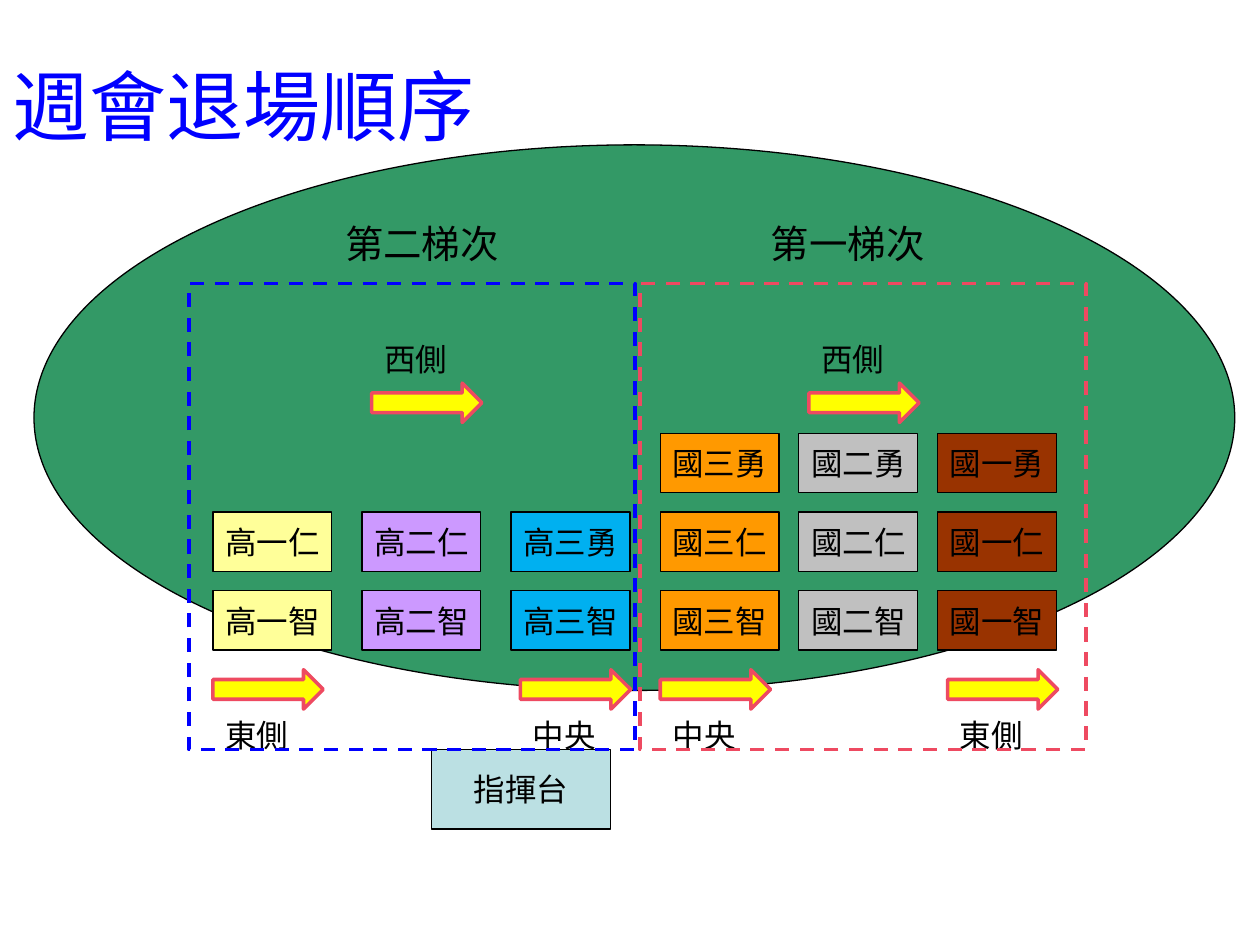
from dataclasses import dataclass

from pptx import Presentation
from pptx.dml.color import RGBColor
from pptx.enum.dml import MSO_LINE
from pptx.enum.shapes import MSO_SHAPE
from pptx.enum.text import MSO_ANCHOR, MSO_AUTO_SIZE, PP_ALIGN
from pptx.util import Inches, Pt

BLUE = RGBColor(0x00, 0x00, 0xFF)
BLACK = RGBColor(0x00, 0x00, 0x00)
FIELD_GREEN = RGBColor(0x33, 0x99, 0x66)
PODIUM_BLUE = RGBColor(0xBB, 0xE0, 0xE3)
SKY = RGBColor(0x00, 0xB0, 0xF0)
LILAC = RGBColor(0xCC, 0x99, 0xFF)
CREAM = RGBColor(0xFF, 0xFF, 0x99)
ORANGE = RGBColor(0xFF, 0x99, 0x00)
SILVER = RGBColor(0xC0, 0xC0, 0xC0)
BROWN = RGBColor(0x99, 0x33, 0x00)
YELLOW = RGBColor(0xFF, 0xFF, 0x00)
CORAL = RGBColor(0xEE, 0x4A, 0x61)

FONT = "Arial"
# The slide is a grid of 100 columns by 75 rows of square units.
SLIDE_WIDTH, SLIDE_HEIGHT = Inches(10), Inches(7.5)
UNIT = SLIDE_WIDTH // 100

CLASS_WIDTH, CLASS_HEIGHT = 9.44, 4.72
CLASS_TOP, CLASS_ROW_PITCH, CLASS_ROWS = 11.88, 6.25, 3
ARROW_WIDTH, ARROW_HEIGHT = 8.75, 3.13
LABEL_WIDTH, LABEL_HEIGHT = 7.9, 4
WEST_LABEL_TOP, WEST_ARROW_TOP = 4, 7.9
EXIT_ARROW_TOP, EXIT_LABEL_TOP = 30.65, 33.85
HEADING_WIDTH, HEADING_HEIGHT = 15, 4.7


@dataclass
class Box:
    """An area in grid units."""
    left: float
    top: float
    width: float
    height: float

    def inner(self, left, top, width, height):
        """An area placed relative to this one."""
        return Box(self.left + left, self.top + top, width, height)

    def emu(self):
        return [round(n * UNIT) for n in
                (self.left, self.top, self.width, self.height)]


@dataclass
class Batch:
    heading: str
    heading_left: float
    outline: RGBColor
    first_column: float
    column_pitch: float
    columns: list
    west_left: float
    exits: list


BATCHES = [
    (Box(15, 22.5, 35.4, 37), Batch(
        "第二梯次", 11.4, BLUE, 1.9, 11.83,
        [(CREAM, ["高一仁", "高一智"]),
         (LILAC, ["高二仁", "高二智"]),
         (SKY, ["高三勇", "高三智"])],
        14.5, [("東側", 1.9), ("中央", 26.3)])),
    (Box(50.8, 22.5, 35.4, 37), Batch(
        "第一梯次", 9.4, CORAL, 1.6, 11,
        [(ORANGE, ["國三勇", "國三仁", "國三智"]),
         (SILVER, ["國二勇", "國二仁", "國二智"]),
         (BROWN, ["國一勇", "國一仁", "國一智"])],
        13.4, [("中央", 1.6), ("東側", 24.4)])),
]


def write(frame, text, size, color=BLACK, align=PP_ALIGN.LEFT):
    paragraph = frame.paragraphs[0]
    paragraph.alignment = align
    run = paragraph.add_run()
    run.text = text
    run.font.name = FONT
    run.font.size = Pt(size)
    run.font.color.rgb = color


def add_shape(slide, kind, box, fill, line, line_width=0.75):
    shape = slide.shapes.add_shape(kind, *box.emu())
    shape.shadow.inherit = False
    if fill is None:
        shape.fill.background()
    else:
        shape.fill.solid()
        shape.fill.fore_color.rgb = fill
    shape.line.color.rgb = line
    shape.line.width = Pt(line_width)
    return shape


def add_block(slide, box, text, fill):
    """A filled rectangle with a centred name."""
    block = add_shape(slide, MSO_SHAPE.RECTANGLE, box, fill, BLACK)
    frame = block.text_frame
    frame.word_wrap = False
    frame.vertical_anchor = MSO_ANCHOR.MIDDLE
    write(frame, text, 18, align=PP_ALIGN.CENTER)


def add_label(slide, box, text, size=18):
    frame = slide.shapes.add_textbox(*box.emu()).text_frame
    frame.word_wrap = True
    frame.auto_size = MSO_AUTO_SIZE.SHAPE_TO_FIT_TEXT
    write(frame, text, size)


def add_direction(slide, box, text, left, arrow_top, label_top):
    """An arrow and the name of the side it leads from."""
    add_shape(slide, MSO_SHAPE.RIGHT_ARROW,
              box.inner(left, arrow_top, ARROW_WIDTH, ARROW_HEIGHT),
              YELLOW, CORAL, 2)
    add_label(slide, box.inner(left, label_top, LABEL_WIDTH, LABEL_HEIGHT), text)


def add_title(slide, box):
    title = slide.shapes.title
    title.left, title.top, title.width, title.height = box.emu()
    title.text_frame.vertical_anchor = MSO_ANCHOR.MIDDLE
    write(title.text_frame, "週會退場順序", 44, BLUE)


def add_batch(slide, box, batch):
    """One dashed area with its classes, exits and heading."""
    for column, (fill, names) in enumerate(batch.columns):
        left = batch.first_column + column * batch.column_pitch
        for row, name in enumerate(names, CLASS_ROWS - len(names)):
            top = CLASS_TOP + row * CLASS_ROW_PITCH
            add_block(slide, box.inner(left, top, CLASS_WIDTH, CLASS_HEIGHT),
                      name, fill)

    add_direction(slide, box, "西側", batch.west_left,
                  WEST_ARROW_TOP, WEST_LABEL_TOP)
    for side, left in batch.exits:
        add_direction(slide, box, side, left, EXIT_ARROW_TOP, EXIT_LABEL_TOP)

    outline = add_shape(slide, MSO_SHAPE.RECTANGLE, box, None, batch.outline, 2)
    outline.line.dash_style = MSO_LINE.DASH
    add_label(slide, box.inner(batch.heading_left, -5.5,
                               HEADING_WIDTH, HEADING_HEIGHT),
              batch.heading, 22)


def main():
    deck = Presentation()
    deck.slide_width, deck.slide_height = SLIDE_WIDTH, SLIDE_HEIGHT
    slide = deck.slides.add_slide(deck.slide_layouts[5])
    add_title(slide, Box(0, 2.1, 90, 12.5))
    add_shape(slide, MSO_SHAPE.OVAL, Box(2.7, 11.5, 95.3, 43.3),
              FIELD_GREEN, BLACK)
    add_block(slide, Box(34.25, 59.5, 14.2, 6.3), "指揮台", PODIUM_BLUE)
    for box, batch in BATCHES:
        add_batch(slide, box, batch)
    deck.save("out.pptx")


if __name__ == "__main__":
    main()
